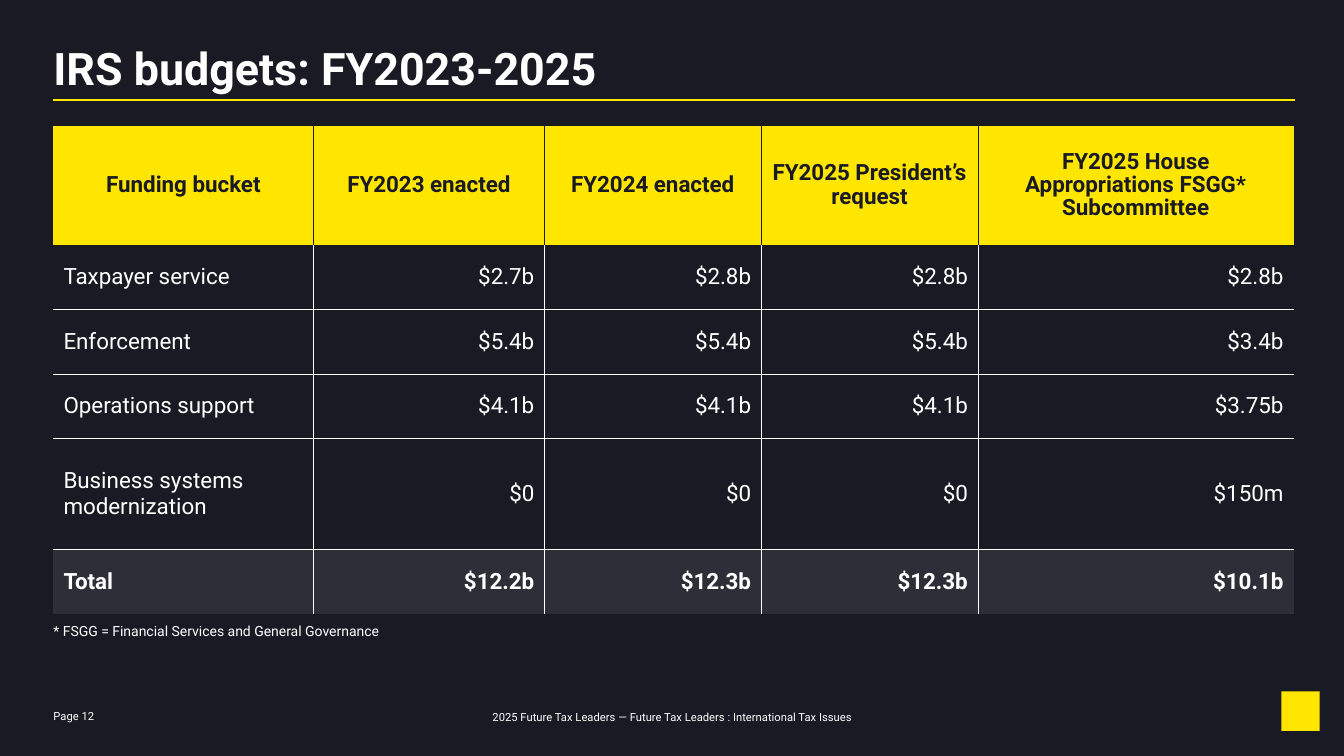
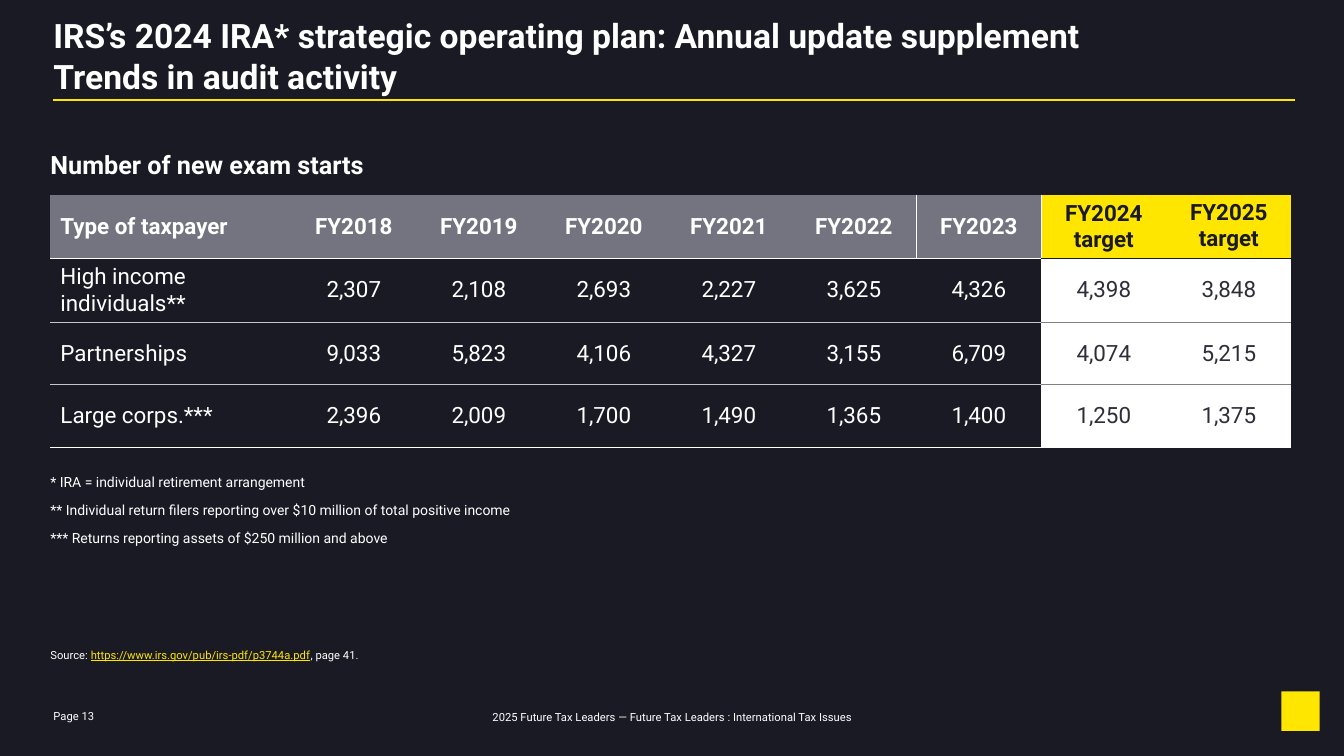
import pptx
import pptx.dml.color
import pptx.enum.shapes
import pptx.enum.text
import pptx.oxml
import pptx.oxml.ns
import pptx.util
from lxml import etree

Inches = pptx.util.Inches
Pt = pptx.util.Pt
Align = pptx.enum.text.PP_ALIGN
Anchor = pptx.enum.text.MSO_ANCHOR
qn = pptx.oxml.ns.qn

FONT = "Roboto"
DARK, WHITE, YELLOW = "1A1A24", "FFFFFF", "FFE600"
CHARCOAL, GREY, SILVER, MID_GREY = "2E2E38", "747480", "C4C4CD", "808080"
FOOTER = "2025 Future Tax Leaders — Future Tax Leaders : International Tax Issues"
PLAIN_TABLE_STYLE = "{2D5ABB26-0587-4C30-8999-92F81FD0307C}"
TITLE_ONLY = 5

BUDGET_ROWS = [
    ["Funding bucket", "FY2023 enacted", "FY2024 enacted", "FY2025 President’s request",
     "FY2025 House Appropriations FSGG* Subcommittee"],
    ["Taxpayer service", "$2.7b", "$2.8b", "$2.8b", "$2.8b"],
    ["Enforcement", "$5.4b", "$5.4b", "$5.4b", "$3.4b"],
    ["Operations support", "$4.1b", "$4.1b", "$4.1b", "$3.75b"],
    ["Business systems modernization", "$0", "$0", "$0", "$150m"],
    ["Total", "$12.2b", "$12.3b", "$12.3b", "$10.1b"],
]
EXAM_ROWS = [
    ["Type of taxpayer", "FY2018", "FY2019", "FY2020", "FY2021", "FY2022", "FY2023",
     "FY2024 target", "FY2025 target"],
    ["High income individuals**", "2,307", "2,108", "2,693", "2,227", "3,625", "4,326",
     "4,398", "3,848"],
    ["Partnerships", "9,033", "5,823", "4,106", "4,327", "3,155", "6,709", "4,074", "5,215"],
    ["Large corps.***", "2,396", "2,009", "1,700", "1,490", "1,365", "1,400", "1,250", "1,375"],
]
FIRST_TARGET_COLUMN = 7


def color(value):
    """Turn a hex string into a colour."""
    return pptx.dml.color.RGBColor.from_string(value)


def add_span(para, text, size, ink=WHITE, bold=False, underline=False):
    """Add one formatted run to a paragraph."""
    span = para.add_run()
    span.text = text
    font = span.font
    font.name, font.size, font.bold, font.underline = FONT, Pt(size), bold, underline
    font.color.rgb = color(ink)


def add_text(slide, box, paras, size, top_inset=0, align=Align.LEFT, anchor=Anchor.TOP,
             spacing=1.0, before=0, after=0, wrap=True):
    """Place a text box whose paragraphs are lists of (text, format) runs."""
    frame = slide.shapes.add_textbox(*map(Inches, box)).text_frame
    frame.word_wrap = wrap
    frame.vertical_anchor = anchor
    frame.margin_left = frame.margin_right = frame.margin_bottom = 0
    frame.margin_top = Inches(top_inset)
    for index, runs in enumerate(paras):
        para = frame.add_paragraph() if index else frame.paragraphs[0]
        para.alignment, para.line_spacing = align, spacing
        para.space_before, para.space_after = Pt(before), Pt(after)
        for text, style in runs:
            add_span(para, text, size, **style)


def set_title(slide, box, lines, size):
    """Move the title placeholder and fill it line by line."""
    title = slide.shapes.title
    title.left, title.top, title.width, title.height = map(Inches, box)
    frame = title.text_frame
    frame.margin_left = frame.margin_right = frame.margin_top = frame.margin_bottom = 0
    frame.vertical_anchor = Anchor.TOP
    frame.auto_size = pptx.enum.text.MSO_AUTO_SIZE.NONE
    para = frame.paragraphs[0]
    para.alignment = Align.LEFT
    for index, line in enumerate(lines):
        if index:
            para.add_line_break()
        add_span(para, line, size, bold=True)


def add_frame(slide, page):
    """Draw the title rule, the footer and the corner mark."""
    rule = slide.shapes.add_connector(pptx.enum.shapes.MSO_CONNECTOR.STRAIGHT,
                                      Inches(0.53), Inches(0.99), Inches(12.84), Inches(0.99))
    rule.line.color.rgb = color(YELLOW)
    rule.line.width = Pt(1.5)
    etree.SubElement(rule._element.spPr, qn("a:effectLst"))
    add_text(slide, (0.53, 7.04, 0.56, 0.13), [[(f"Page {page}", {})]], 8)
    add_text(slide, (4.82, 7.04, 3.7, 0.14), [[(FOOTER, {})]], 8,
             align=Align.CENTER, anchor=Anchor.MIDDLE)
    mark = slide.shapes.add_shape(pptx.enum.shapes.MSO_SHAPE.RECTANGLE, Inches(12.71),
                                  Inches(6.86), Inches(0.38), Inches(0.39))
    mark.shadow.inherit = False
    mark.fill.solid()
    mark.fill.fore_color.rgb = color(YELLOW)
    mark.line.fill.background()


def start_slide(deck, page, title_box, title_lines, title_size):
    """Add a title-only slide with its shared parts."""
    slide = deck.slides.add_slide(deck.slide_layouts[TITLE_ONLY])
    set_title(slide, title_box, title_lines, title_size)
    add_frame(slide, page)
    return slide


def set_edges(cell, edges):
    """Draw the named sides of a cell, each as (colour, points)."""
    properties = cell._tc.get_or_add_tcPr()
    for side in "LRTB":
        if side in edges:
            ink, width = edges[side]
            line = etree.SubElement(properties, qn(f"a:ln{side}"), w=str(Pt(width)))
            fill = etree.SubElement(line, qn("a:solidFill"))
            etree.SubElement(fill, qn("a:srgbClr"), val=ink)


def set_fill(cell, ink, opacity=100):
    """Fill a cell, or leave it clear when there is no colour."""
    if ink is None:
        cell.fill.background()
        return
    cell.fill.solid()
    cell.fill.fore_color.rgb = color(ink)
    if opacity < 100:
        swatch = cell._tc.tcPr.find(".//" + qn("a:srgbClr"))
        etree.SubElement(swatch, qn("a:alpha"), val=str(opacity * 1000))


def add_table(slide, left, top, widths, heights, rows, style_cell):
    """Place a table and let style_cell give each cell its look."""
    shape = slide.shapes.add_table(len(rows), len(widths), Inches(left), Inches(top),
                                   Inches(sum(widths)), Inches(sum(heights)))
    table = shape.table
    table.first_row = table.horz_banding = False
    table._tbl.tblPr.find(qn("a:tableStyleId")).text = PLAIN_TABLE_STYLE
    for column, width in zip(table.columns, widths):
        column.width = Inches(width)
    for row, height in zip(table.rows, heights):
        row.height = Inches(height)
    for row, values in enumerate(rows):
        for column, value in enumerate(values):
            cell = table.cell(row, column)
            cell.vertical_anchor = Anchor.MIDDLE
            para = cell.text_frame.paragraphs[0]
            ink, bold = style_cell(cell, para, row, column)
            add_span(para, value, 16, ink, bold)


def style_budget_cell(cell, para, row, column):
    """Style a budget cell by its row and column."""
    last_row, last_column = len(BUDGET_ROWS) - 1, len(BUDGET_ROWS[0]) - 1
    header, total = row == 0, row == last_row
    upright, level = (DARK if header else WHITE, 0.5), (WHITE, 0.5)
    edges = {}
    if column > 0:
        edges["L"] = upright
    if column < last_column:
        edges["R"] = upright
    if row > 1:
        edges["T"] = level
    if 0 < row < last_row:
        edges["B"] = level
    set_edges(cell, edges)
    if header:
        set_fill(cell, YELLOW)
        para.alignment, para.line_spacing = Align.CENTER, 0.9
    else:
        set_fill(cell, CHARCOAL if total else None, 48)
        para.alignment = Align.RIGHT if column else Align.LEFT
    return DARK if header else WHITE, header or total


def exam_edge_below(row, target):
    """Give the line under a row of the exam table."""
    if row == len(EXAM_ROWS) - 1:
        return WHITE, 1
    if row == 0:
        return (DARK if target else WHITE), 1
    return (MID_GREY, 1) if target else (SILVER, 0.5)


def style_exam_cell(cell, para, row, column):
    """Style an exam cell by its row and column."""
    header, target = row == 0, column >= FIRST_TARGET_COLUMN
    edges = {"B": exam_edge_below(row, target)}
    if not header:
        edges["T"] = exam_edge_below(row - 1, target)
    elif column in (5, 6):
        edges["R" if column == 5 else "L"] = (WHITE, 1)
    set_edges(cell, edges)
    para.alignment = Align.CENTER if column else Align.LEFT
    if header:
        set_fill(cell, YELLOW if target else GREY)
        if column == len(EXAM_ROWS[0]) - 1:
            cell.vertical_anchor = Anchor.TOP
        return DARK if target else WHITE, True
    set_fill(cell, WHITE if target else None)
    return CHARCOAL if target else WHITE, False


def build_budget_slide(deck):
    """Build the slide on budgets by funding bucket."""
    slide = start_slide(deck, 12, (0.53, 0.4, 12.39, 0.51), ["IRS budgets: FY2023-2025"], 32)
    add_table(slide, 0.53, 1.25, [2.58, 2.29, 2.15, 2.15, 3.13],
              [1.18, 0.64, 0.64, 0.64, 1.1, 0.64], BUDGET_ROWS, style_budget_cell)
    add_text(slide, (0.53, 6.15, 3.47, 0.19),
             [[("* FSGG = Financial Services and General Governance", {})]], 10,
             top_inset=0.04, spacing=0.9, before=4, after=4, wrap=False)


def build_exam_slide(deck):
    """Build the slide on new exam starts."""
    slide = start_slide(deck, 13, (0.53, 0.15, 12.39, 0.79),
                        ["IRS’s 2024 IRA* strategic operating plan: Annual update supplement",
                         "Trends in audit activity"], 24)
    left = 0.5
    note = {"top_inset": 0.04, "spacing": 0.85, "after": 6}
    add_text(slide, (left, 1.49, 11.6, 0.3),
             [[("Number of new exam starts", {"bold": True})]], 18, **note)
    add_table(slide, left, 1.93, [2.39] + [1.24] * 8, [0.63, 0.63, 0.62, 0.62],
              EXAM_ROWS, style_exam_cell)
    add_text(slide, (left, 4.68, 12, 0.75), [
        [("* IRA = individual retirement arrangement", {})],
        [("** Individual return filers reporting over $10 million of total positive income", {})],
        [("*** Returns reporting assets of $250 million and above", {})],
    ], 10, before=4, **note)
    add_text(slide, (left, 6.41, 10.64, 0.15), [[
        ("Source: ", {}),
        ("https://www.irs.gov/pub/irs-pdf/p3744a.pdf", {"ink": YELLOW, "underline": True}),
        (", page 41.", {}),
    ]], 8, **note)


def main():
    """Build and save the deck."""
    deck = pptx.Presentation()
    deck.slide_width, deck.slide_height = Inches(13.33), Inches(7.5)
    background = deck.slide_master.background.fill
    background.solid()
    background.fore_color.rgb = color(DARK)
    build_budget_slide(deck)
    build_exam_slide(deck)
    deck.save("out.pptx")


if __name__ == "__main__":
    main()
